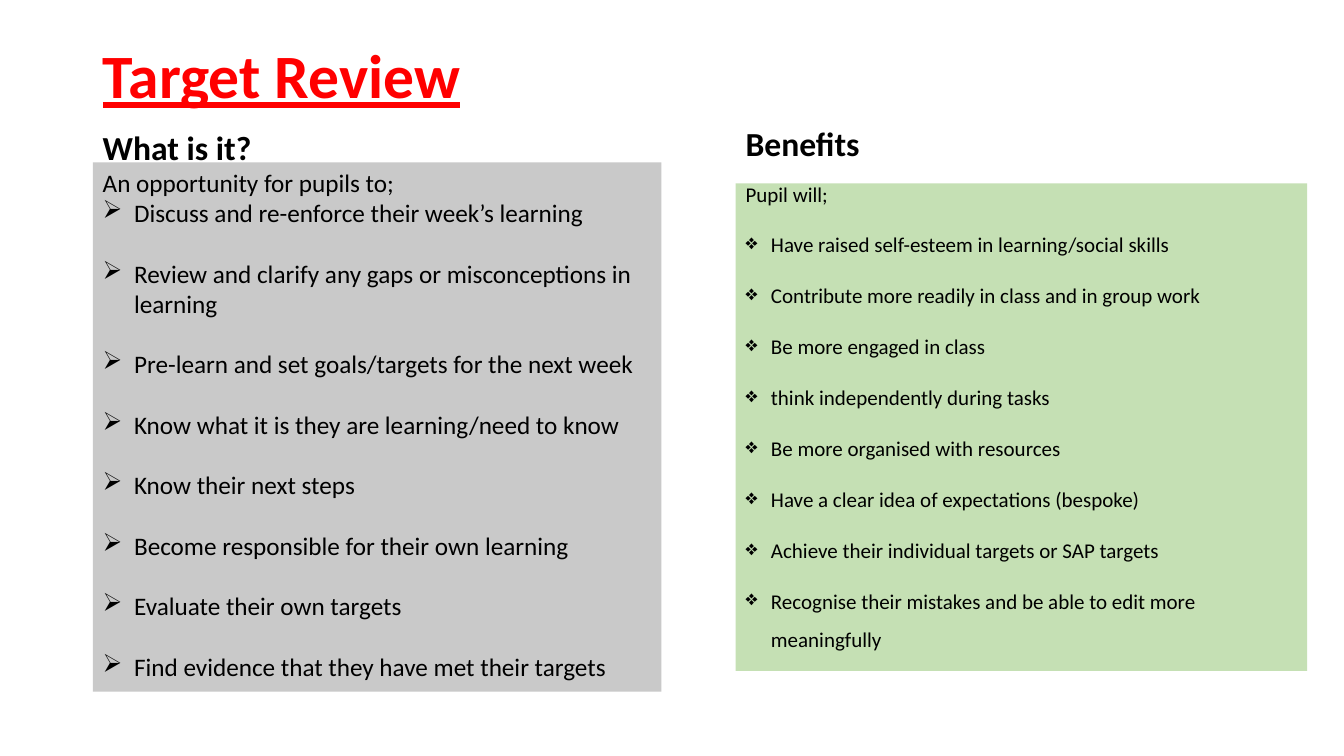
import lxml.etree
import pptx
import pptx.dml.color
import pptx.enum.shapes
import pptx.enum.text
import pptx.oxml.ns
import pptx.util

Cm = pptx.util.Cm
Pt = pptx.util.Pt
RGBColor = pptx.dml.color.RGBColor
RED = RGBColor(0xFF, 0x00, 0x00)
BLACK = RGBColor(0x00, 0x00, 0x00)
GREY = RGBColor(0xC9, 0xC9, 0xC9)
GREEN = RGBColor(0xC5, 0xE0, 0xB4)

LEFT_COLUMN = (2.34, 14.33)
RIGHT_COLUMN = (18.54, 14.4)

OPPORTUNITIES = [
    "Discuss and re-enforce their week’s learning",
    "Review and clarify any gaps or misconceptions in learning",
    "Pre-learn and set goals/targets for the next week",
    "Know what it is they are learning/need to know",
    "Know their next steps",
    "Become responsible for their own learning",
    "Evaluate their own targets",
    "Find evidence that they have met their targets",
]
BENEFITS = [
    "Have raised self-esteem in learning/social skills",
    "Contribute more readily in class and in group work",
    "Be more engaged in class",
    "think independently during tasks",
    "Be more organised with resources",
    "Have a clear idea of expectations (bespoke)",
    "Achieve their individual targets or SAP targets",
    "Recognise their mistakes and be able to edit more meaningfully",
]


class SlideBuilder:
    """Holds the text style and the slide being built."""

    font_name = "Calibri"

    def __init__(self, presentation):
        """Add a title-only slide."""
        self.slide = presentation.slides.add_slide(presentation.slide_layouts[5])

    def apply(self, target, values):
        """Set each named attribute of the target."""
        for name, value in values.items():
            setattr(target, name, value)

    def frame(self, shape, **values):
        """Give the text frame wrapping and a top anchor."""
        frame = shape.text_frame
        self.apply(frame, {
            "word_wrap": True,
            "auto_size": pptx.enum.text.MSO_AUTO_SIZE.NONE,
            "vertical_anchor": pptx.enum.text.MSO_ANCHOR.TOP,
            **values,
        })
        return frame

    def fill_paragraph(self, paragraph, text, size, color=BLACK, bold=False,
                       underline=False, spacing=1.0, before=0):
        """Fill one left-aligned paragraph."""
        run = paragraph.add_run()
        run.text = text
        self.apply(run.font, {"name": self.font_name, "size": Pt(size),
                              "bold": bold, "underline": underline})
        run.font.color.rgb = color
        self.apply(paragraph, {"alignment": pptx.enum.text.PP_ALIGN.LEFT,
                               "line_spacing": spacing,
                               "space_before": Pt(before)})

    def bullet(self, paragraph, character, indent):
        """Give a paragraph a hanging bullet."""
        properties = paragraph._p.get_or_add_pPr()
        properties.set("marL", str(Cm(indent)))
        properties.set("indent", str(-Cm(indent)))
        mark = lxml.etree.SubElement(properties, pptx.oxml.ns.qn("a:buChar"))
        mark.set("char", character)

    def title(self, text):
        """Place and format the title placeholder."""
        shape = self.slide.shapes.title
        self.apply(shape, {"left": Cm(2.34), "top": Cm(1.02),
                           "width": Cm(29.21), "height": Cm(3.68)})
        self.fill_paragraph(self.frame(shape).paragraphs[0], text, 44, RED,
                            bold=True, underline=True, spacing=0.9)

    def heading(self, text, column, top):
        """Add a bold column heading."""
        left, width = column
        shape = self.slide.shapes.add_textbox(
            Cm(left), Cm(top), Cm(width), Cm(2.29))
        frame = self.frame(shape, margin_top=Cm(0.36))
        self.fill_paragraph(frame.paragraphs[0], text, 24, bold=True,
                            spacing=0.9)

    def panel(self, column, top, height, fill, intro, items, character,
              indent, size, intro_spacing, spacing, first_gap, gap):
        """Add a filled box with an opening line and a bulleted list."""
        left, width = column
        shape = self.slide.shapes.add_shape(
            pptx.enum.shapes.MSO_SHAPE.RECTANGLE,
            Cm(left), Cm(top), Cm(width), Cm(height))
        shape.shadow.inherit = False
        shape.fill.solid()
        shape.fill.fore_color.rgb = fill
        shape.line.fill.background()
        frame = self.frame(shape)
        self.fill_paragraph(frame.paragraphs[0], intro, size,
                            spacing=intro_spacing)
        for index, item in enumerate(items):
            paragraph = frame.add_paragraph()
            self.fill_paragraph(paragraph, item, size, spacing=spacing,
                                before=gap if index else first_gap)
            self.bullet(paragraph, character, indent)


def main():
    """Build and save the slide."""
    presentation = pptx.Presentation()
    presentation.slide_width = Cm(33.87)
    presentation.slide_height = Cm(19.05)
    builder = SlideBuilder(presentation)
    builder.title("Target Review")
    builder.heading("What is it?", LEFT_COLUMN, 2.95)
    builder.heading("Benefits", RIGHT_COLUMN, 2.84)
    builder.panel(RIGHT_COLUMN, 4.62, 12.29, GREEN, "Pupil will;", BENEFITS,
                  "❖", indent=0.64, size=15, intro_spacing=0.7, spacing=1.5,
                  first_gap=9.4, gap=9.4)
    builder.panel(LEFT_COLUMN, 4.09, 13.34, GREY,
                  "An opportunity for pupils to;", OPPORTUNITIES,
                  "➢", indent=0.79, size=18, intro_spacing=1.0, spacing=1.0,
                  first_gap=0, gap=21.6)
    presentation.save("out.pptx")


if __name__ == "__main__":
    main()
